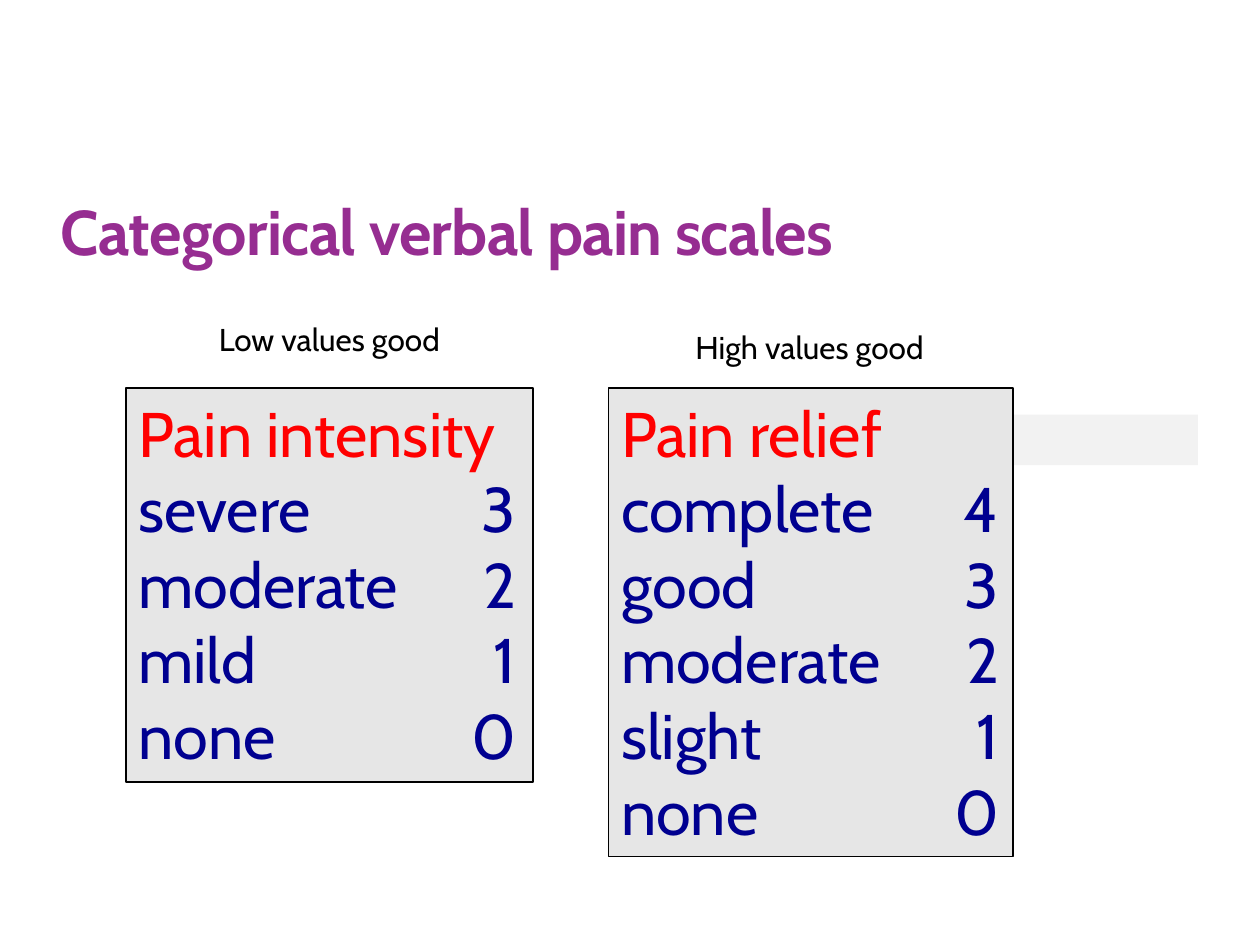
from lxml.etree import SubElement
from pptx import Presentation
from pptx.dml.color import RGBColor
from pptx.enum.shapes import MSO_SHAPE
from pptx.enum.text import MSO_ANCHOR, MSO_AUTO_SIZE, PP_ALIGN
from pptx.oxml.ns import qn
from pptx.util import Cm, Pt


def color(code):
    return RGBColor.from_string(code)


def write(para, text, size=36, ink="000000", bold=False, align=PP_ALIGN.LEFT,
          tab=None, space=None):
    para.alignment = align
    if tab:
        tabs = SubElement(para._p.get_or_add_pPr(), qn("a:tabLst"))
        SubElement(tabs, qn("a:tab"), pos=str(tab), algn="r")
    run = para.add_run()
    run.text = text
    font = run.font
    font.name, font.size, font.bold = "Cabin", Pt(size), bold
    font.color.rgb = color(ink)
    if space:
        run._r.get_or_add_rPr().set("spc", str(space))


deck = Presentation()
deck.slide_width, deck.slide_height = Cm(25.4), Cm(19.05)
slide = deck.slides.add_slide(deck.slide_layouts[6])
shapes = slide.shapes

# Title
title = shapes.add_textbox(Cm(1.22), Cm(3.66), Cm(22.38), Cm(1.75)).text_frame
title.word_wrap = True
title.vertical_anchor = MSO_ANCHOR.BOTTOM
title.margin_left = title.margin_right = title.margin_top = title.margin_bottom = 0
write(title.paragraphs[0], "Categorical verbal pain scales",
      ink="962D91", bold=True, space=-40)

# Grey band behind the right panel
band = shapes.add_shape(MSO_SHAPE.RECTANGLE, Cm(17.7), Cm(8.36), Cm(6.45), Cm(1.02))
band.shadow.inherit = False
band.fill.solid()
band.fill.fore_color.rgb = color("F2F2F2")
band.line.fill.background()

# Scale panels: left, width, height, heading, words from highest score to 0
panels = [
    (2.54, 8.2, 7.95, "Pain intensity", ["severe", "moderate", "mild", "none"]),
    (12.27, 8.15, 9.45, "Pain relief",
     ["complete", "good", "moderate", "slight", "none"]),
]
for left, width, height, head, words in panels:
    panel = shapes.add_shape(MSO_SHAPE.RECTANGLE, Cm(left), Cm(7.82),
                             Cm(width), Cm(height))
    panel.shadow.inherit = False
    panel.fill.solid()
    panel.fill.fore_color.rgb = color("E6E6E6")
    panel.line.color.rgb = color("000000")
    panel.line.width = Pt(1)
    frame = panel.text_frame
    frame.word_wrap = False
    frame.auto_size = MSO_AUTO_SIZE.SHAPE_TO_FIT_TEXT
    frame.vertical_anchor = MSO_ANCHOR.TOP
    write(frame.paragraphs[0], head, ink="FF0000", tab=Cm(7.62))
    for rank, word in enumerate(words, 1):
        write(frame.add_paragraph(), f"{word}\t{len(words) - rank}",
              ink="000090", tab=Cm(7.62))

# Captions above the panels
for left, top, text in [(2.54, 6.32, "Low values good"),
                        (12.22, 6.48, "High values good")]:
    note = shapes.add_textbox(Cm(left), Cm(top), Cm(8.2), Cm(1.02)).text_frame
    note.word_wrap = True
    note.auto_size = MSO_AUTO_SIZE.SHAPE_TO_FIT_TEXT
    write(note.paragraphs[0], text, size=18, align=PP_ALIGN.CENTER)

deck.save("out.pptx")
